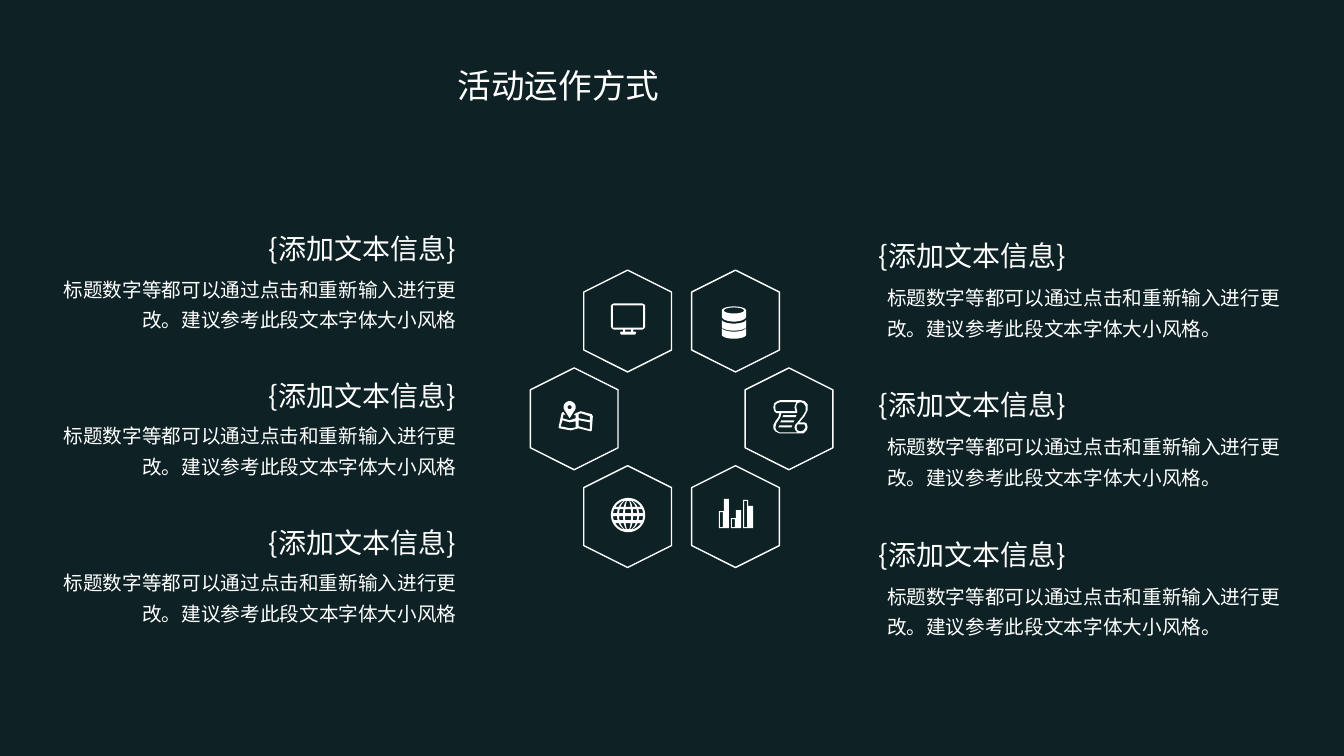
"""Build the slide 活动运作方式: six hexagon icons between two columns of text."""
from math import cos, pi, sin, sqrt

from lxml.etree import SubElement
from pptx import Presentation
from pptx.dml.color import RGBColor
from pptx.enum.shapes import MSO_SHAPE
from pptx.enum.text import MSO_AUTO_SIZE, PP_ALIGN
from pptx.oxml.ns import qn
from pptx.util import Inches, Pt

WHITE = RGBColor.from_string("FFFFFF")
DARK = RGBColor.from_string("0E2225")
HEAD_FONT, BODY_FONT = "Noto Sans CJK JP", "Noto Sans CJK SC"


def add_text(text, x, y, w, h, size, font, align, spacing=None):
    tf = s.shapes.add_textbox(Inches(x), Inches(y), Inches(w), Inches(h)).text_frame
    tf.word_wrap = True
    tf.auto_size = MSO_AUTO_SIZE.SHAPE_TO_FIT_TEXT
    p = tf.paragraphs[0]
    p.text = text
    p.alignment = align
    p.line_spacing = spacing
    p.font.size = Pt(size)
    p.font.color.rgb = WHITE
    p.font.name = font
    SubElement(p._p.pPr.find(qn("a:defRPr")), qn("a:ea"), typeface=font)


def arc(cx, cy, rx, ry, start=0, end=360, steps=24):
    angles = [(start + (end - start) * i / steps) * pi / 180 for i in range(steps + 1)]
    return [(cx + rx * cos(a), cy + ry * sin(a)) for a in angles]


prs = Presentation()
prs.slide_width, prs.slide_height = Inches(13.33), Inches(7.5)
s = prs.slides.add_slide(prs.slide_layouts[6])

backdrop = s.shapes.add_shape(MSO_SHAPE.RECTANGLE, 0, Inches(-0.02), Inches(13.33), Inches(7.52))
backdrop.shadow.inherit = False
backdrop.fill.solid()
backdrop.fill.fore_color.rgb = DARK
backdrop.line.fill.background()

add_text("活动运作方式", 4.44, 0.59, 4.45, 0.5, 24, HEAD_FONT, PP_ALIGN.JUSTIFY)

for row, columns in enumerate([(5.72, 6.79), (5.19, 7.32), (5.72, 6.79)]):
    for x in columns:
        sp = s.shapes.add_shape(MSO_SHAPE.HEXAGON, Inches(x), Inches(2.75 + 0.97 * row),
                                Inches(1.01), Inches(0.87))
        sp.rotation = 90
        sp.shadow.inherit = False
        sp.fill.background()
        sp.line.color.rgb = WHITE
        sp.line.width = Pt(1)

monitor = [
    [(6.09, 3.01), (6.37, 3.01), (6.39, 3.02), (6.4, 3.03), (6.4, 3.24), (6.39, 3.26),
     (6.37, 3.27), (6.28, 3.27), (6.28, 3.29), (6.3, 3.29), (6.31, 3.3), (6.3, 3.32),
     (6.16, 3.32), (6.15, 3.3), (6.16, 3.29), (6.18, 3.29), (6.18, 3.27), (6.09, 3.27),
     (6.07, 3.26), (6.06, 3.24), (6.06, 3.03), (6.07, 3.02)],
    [(6.08, 3.03), (6.38, 3.03), (6.38, 3.25), (6.08, 3.25)],
    [(6.2, 3.27), (6.26, 3.27), (6.26, 3.29), (6.2, 3.29)],
]

database = [
    arc(7.28, 3.08, 0.12, 0.04, 180, 360) + arc(7.28, 3.14, 0.12, 0.05, 0, 180),
    arc(7.28, 3.08, 0.1, 0.03),
]
for y in (3.17, 3.25):
    database.append(arc(7.28, y, 0.12, 0.04, 180, 0) + arc(7.28, y + 0.07, 0.12, 0.04, 0, 180))

folded_map = [
    [(5.58, 4.17), (5.56, 4.23), (5.66, 4.25), (5.71, 4.24), (5.71, 4.18), (5.65, 4.19)],
    [(5.74, 4.17), (5.74, 4.23), (5.85, 4.26), (5.85, 4.19)],
    [(5.76, 4.1), (5.74, 4.11), (5.74, 4.15), (5.85, 4.17), (5.85, 4.13)],
    [(5.76, 4.08), (5.87, 4.11), (5.88, 4.13), (5.87, 4.27), (5.86, 4.28), (5.74, 4.25),
     (5.66, 4.27), (5.55, 4.25), (5.54, 4.24), (5.57, 4.1), (5.58, 4.09), (5.59, 4.09),
     (5.61, 4.12), (5.59, 4.11), (5.58, 4.15), (5.65, 4.17), (5.71, 4.15), (5.71, 4.12),
     (5.69, 4.12), (5.71, 4.1)],
    arc(5.65, 4.04, 0.02, 0.02),
    arc(5.65, 4.04, 0.06, 0.06, 160, 380) + [(5.65, 4.15)],
]

scroll = [
    [(7.94, 3.99), (7.91, 4), (7.9, 4.02), (7.9, 4.05), (7.91, 4.09), (7.9, 4.1),
     (7.75, 4.1), (7.74, 4.14), (7.7, 4.2), (7.69, 4.24), (7.7, 4.27), (7.73, 4.29),
     (7.91, 4.29), (7.89, 4.27), (7.88, 4.24), (7.89, 4.21), (7.91, 4.19), (7.96, 4.13),
     (7.99, 4.08), (7.99, 4.03), (7.97, 4)],
    [(7.74, 3.99), (7.71, 4), (7.69, 4.02), (7.69, 4.06), (7.7, 4.08), (7.89, 4.08),
     (7.88, 4.04), (7.89, 4.01), (7.9, 3.99)],
    [(7.74, 3.97), (7.94, 3.97), (7.98, 3.98), (8.01, 4.01), (8.01, 4.07), (7.98, 4.13),
     (7.93, 4.19), (7.98, 4.19), (8, 4.2), (8.01, 4.24), (8, 4.27), (7.97, 4.3),
     (7.73, 4.3), (7.69, 4.28), (7.67, 4.25), (7.67, 4.22), (7.69, 4.18), (7.72, 4.14),
     (7.73, 4.1), (7.7, 4.1), (7.68, 4.08), (7.67, 4.04), (7.68, 4), (7.71, 3.98)],
    [(7.91, 4.21), (7.9, 4.24), (7.91, 4.27), (7.94, 4.28), (7.97, 4.27), (7.99, 4.24),
     (7.98, 4.21)],
]
for i in range(3):
    x, y = 7.77 - 0.02 * i, 4.12 + 0.05 * i
    scroll.append([(x, y), (x + 0.13, y), (x + 0.12, y + 0.02), (x - 0.01, y + 0.02)])

globe = [arc(6.23, 5.11, 0.17, 0.17, steps=48)]
for top, bottom in [(-0.14, -0.08), (-0.06, -0.02), (0.01, 0.05), (0.08, 0.14)]:
    heights = [top + (bottom - top) * i / 6 for i in range(7)]
    for left, right in [(-0.15, -0.11), (-0.09, -0.05), (-0.03, 0.03), (0.05, 0.09), (0.11, 0.15)]:
        sides = [[(6.23 + x * sqrt(1 - (y / 0.15) ** 2), 5.11 + y) for y in heights]
                 for x in (left, right)]
        globe.append(sides[0] + sides[1][::-1])

bars = []
for i, (hollow_top, solid_top) in enumerate([(5.07, 4.95), (5.14, 5.06), (4.96, 5.02)]):
    x = 7.13 + 0.12 * i
    for left, top, right, bottom in [(x, hollow_top, x + 0.05, 5.24),
                                     (x + 0.01, hollow_top + 0.01, x + 0.04, 5.23),
                                     (x + 0.05, solid_top, x + 0.1, 5.24)]:
        bars.append([(left, top), (right, top), (right, bottom), (left, bottom)])

for icon in (monitor, database, folded_map, scroll, globe, bars):
    builder = None
    for contour in icon:
        points = [(Inches(x), Inches(y)) for x, y in contour]
        if builder is None:
            builder = s.shapes.build_freeform(*points[0])
        else:
            builder.move_to(*points[0])
        builder.add_line_segments(points[1:], close=True)
    sp = builder.convert_to_shape()
    sp.shadow.inherit = False
    sp.fill.solid()
    sp.fill.fore_color.rgb = WHITE
    sp.line.fill.background()

heading = "{添加文本信息}"
body = "标题数字等都可以通过点击和重新输入进行更改。建议参考此段文本字体大小风格"
for head_x, body_x, top, step, gap, align, ending in [
        (8.18, 8.7, 2.32, 1.48, 0.4, PP_ALIGN.LEFT, "。"),
        (2.13, 0.4, 2.25, 1.455, 0.385, PP_ALIGN.RIGHT, "")]:
    for i in range(3):
        y = top + step * i
        add_text(heading, head_x, y, 2.93, 0.44, 20, HEAD_FONT, PP_ALIGN.CENTER)
        add_text(body + ending, body_x, y + gap, 4.23, 0.69, 14, BODY_FONT, align, 1.3)

prs.save("out.pptx")
